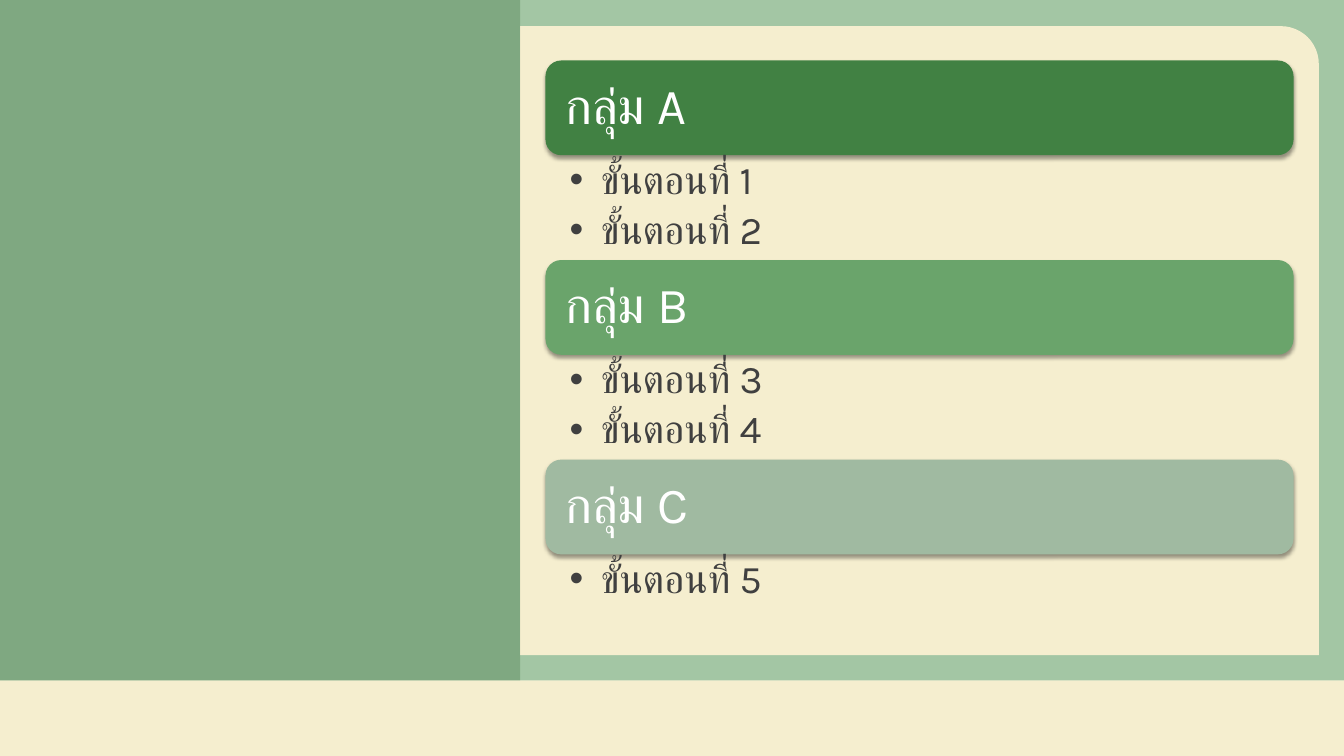
from dataclasses import dataclass

from lxml import etree
from pptx import Presentation
from pptx.dml.color import RGBColor
from pptx.enum.shapes import MSO_SHAPE
from pptx.enum.text import MSO_ANCHOR, PP_ALIGN
from pptx.oxml.ns import qn
from pptx.shapes.autoshape import Shape
from pptx.slide import Slide
from pptx.text.text import TextFrame, _Paragraph
from pptx.util import Emu, Pt

RECT = MSO_SHAPE.RECTANGLE
ROUND_RECT = MSO_SHAPE.ROUNDED_RECTANGLE
ROUND_CORNER = MSO_SHAPE.ROUND_1_RECTANGLE
TOP = MSO_ANCHOR.TOP
MIDDLE = MSO_ANCHOR.MIDDLE
LEFT = PP_ALIGN.LEFT

EMU_PER_PX = 9144
FONT = "Karla"
CREAM = "F5EECF"
WHITE = "FFFFFF"
DARK = "404040"

LIST_LEFT, LIST_TOP, LIST_WIDTH = 541, 60, 742
BAR_HEIGHT = 94
STEP_BASE, STEP_HEIGHT = 26, 39
BULLET_INDENT = 31


@dataclass(frozen=True)
class Panel:
    kind: MSO_SHAPE
    box: tuple[int, int, int, int]
    color: str
    opacity: int = 100
    corner: float | None = None


@dataclass(frozen=True)
class Group:
    title: str
    color: str
    steps: tuple[str, ...]


PANELS = (
    Panel(RECT, (0, 675, 1333, 75), CREAM),
    Panel(RECT, (0, 0, 1333, 675), "488E4A", opacity=50),
    Panel(ROUND_CORNER, (516, 26, 792, 624), CREAM, corner=0.06),
    Panel(RECT, (0, 0, 516, 675), "366A38", opacity=32),
)

GROUPS = (
    Group("กลุ่ม A", "418143", ("ขั้นตอนที่ 1", "ขั้นตอนที่ 2")),
    Group("กลุ่ม B", "6AA46B", ("ขั้นตอนที่ 3", "ขั้นตอนที่ 4")),
    Group("กลุ่ม C", "A0BAA1", ("ขั้นตอนที่ 5",)),
)


def px(value: int) -> Emu:
    return Emu(value * EMU_PER_PX)


def rgb(value: str) -> RGBColor:
    return RGBColor.from_string(value)


def add_panel(s: Slide, panel: Panel) -> Shape:
    sp = s.shapes.add_shape(panel.kind, *map(px, panel.box))
    sp.shadow.inherit = False
    sp.fill.solid()
    sp.fill.fore_color.rgb = rgb(panel.color)
    sp.line.fill.background()
    if panel.corner is not None:
        sp.adjustments[0] = panel.corner
    if panel.opacity < 100:
        color = sp._element.spPr.find(f".//{qn('a:srgbClr')}")
        etree.SubElement(color, qn("a:alpha"), val=str(panel.opacity * 1000))
    return sp


def add_shadow(sp: Shape) -> None:
    effects = sp._element.spPr.find(qn("a:effectLst"))
    shadow = etree.SubElement(
        effects, qn("a:outerShdw"), blurRad=str(Pt(3.1)), dist=str(Pt(1.8)),
        dir="5400000", rotWithShape="0",
    )
    color = etree.SubElement(shadow, qn("a:srgbClr"), val="000000")
    etree.SubElement(color, qn("a:alpha"), val="40000")


def set_frame(tf: TextFrame, margins: tuple[int, int, int, int],
              anchor: MSO_ANCHOR) -> None:
    tf.word_wrap = True
    tf.vertical_anchor = anchor
    tf.margin_left, tf.margin_top, tf.margin_right, tf.margin_bottom = map(px, margins)


def format_paragraph(p: _Paragraph, size: int, color: str, after: float) -> None:
    p.alignment = LEFT
    p.line_spacing = 0.9
    p.space_after = Pt(after)
    for r in p.runs:
        r.font.size = Pt(size)
        r.font.name = FONT
        r.font.color.rgb = rgb(color)
        etree.SubElement(r._r.get_or_add_rPr(), qn("a:cs"), typeface=FONT)


def add_bullet(p: _Paragraph) -> None:
    p.level = 1
    pPr = p._p.get_or_add_pPr()
    pPr.set("marL", str(px(BULLET_INDENT)))
    pPr.set("indent", str(px(-BULLET_INDENT)))
    etree.SubElement(pPr, qn("a:buFont"), typeface="Arial")
    etree.SubElement(pPr, qn("a:buChar"), char="•")


def add_group(s: Slide, group: Group, top: int) -> int:
    bar = add_panel(s, Panel(ROUND_RECT, (LIST_LEFT, top, LIST_WIDTH, BAR_HEIGHT), group.color))
    add_shadow(bar)
    set_frame(bar.text_frame, (15, 15, 15, 15), MIDDLE)
    bar.text_frame.text = group.title
    format_paragraph(bar.text_frame.paragraphs[0], 36, WHITE, 12.6)

    steps_top = top + BAR_HEIGHT
    height = STEP_BASE + STEP_HEIGHT * len(group.steps)
    steps = s.shapes.add_textbox(*map(px, (LIST_LEFT, steps_top, LIST_WIDTH, height)))
    set_frame(steps.text_frame, (24, 5, 28, 5), TOP)
    steps.text_frame.text = "\n".join(group.steps)
    for p in steps.text_frame.paragraphs:
        format_paragraph(p, 28, DARK, 5.6)
        add_bullet(p)
    return steps_top + height


def main() -> None:
    prs = Presentation()
    prs.slide_width, prs.slide_height = px(1333), px(750)
    s = prs.slides.add_slide(prs.slide_layouts[6])
    for panel in PANELS:
        add_panel(s, panel)
    top = LIST_TOP
    for group in GROUPS:
        top = add_group(s, group, top)
    prs.save("out.pptx")


if __name__ == "__main__":
    main()
